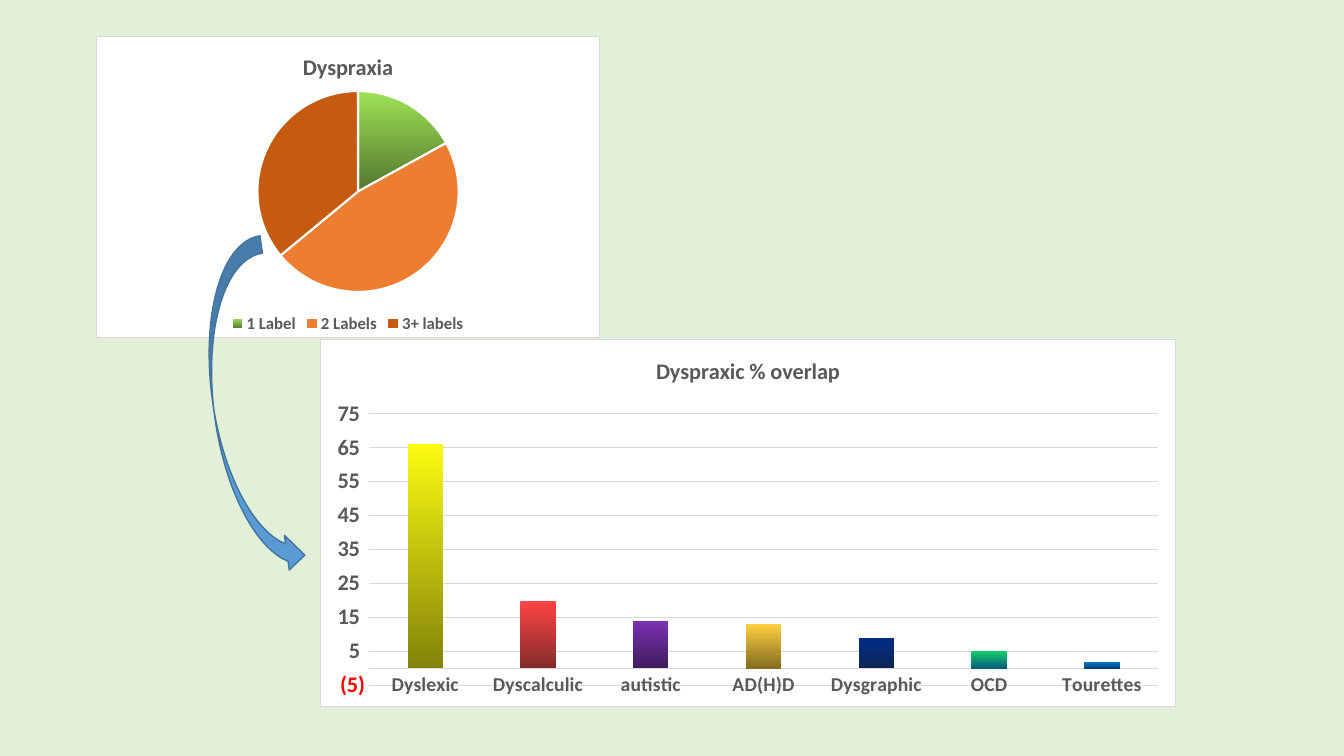
"""Build a slide showing how dyspraxia overlaps with other labels."""
from lxml import etree
from pptx import Presentation
from pptx import util as u
from pptx.chart.data import CategoryChartData
from pptx.dml.color import RGBColor
from pptx.enum import chart as ch, shapes
from pptx.oxml import parse_xml
from pptx.oxml.ns import nsdecls, qn

PX = 914400 / 100.8
GREY, RULE, WHITE = "595959", "D9D9D9", "FFFFFF"


def paint(fmt, *colours):
    """Fill with one colour, or with a top-to-bottom gradient of two."""
    if len(colours) == 1:
        fmt.solid()
        fmt.fore_color.rgb = RGBColor.from_string(colours[0])
        return
    fmt.gradient()
    fmt.gradient_angle = 270
    for stop, colour in zip(fmt.gradient_stops, colours):
        stop.color.rgb = RGBColor.from_string(colour)


def style_font(font, size, colour=GREY, bold=True):
    """Set the size, colour and weight of a Calibri font."""
    font.name, font.size, font.bold = "Calibri", u.Pt(size), bold
    paint(font.fill, colour)


prs = Presentation()
prs.slide_width, prs.slide_height = round(1344 * PX), round(756 * PX)
slide = prs.slides.add_slide(prs.slide_layouts[6])
paint(slide.background.fill, "E2F0D9")

pie_slices = [
    ("1 Label", 17, ("9EE256", "52762D")),
    ("2 Labels", 47, ("ED7D31",)),
    ("3+ labels", 36, ("C55A11",)),
]
overlaps = [
    ("Dyslexic", 66, ("FBFB11", "838309")),
    ("Dyscalculic", 20, ("FE4444", "832B2B")),
    ("autistic", 14, ("7B32B2", "401A5D")),
    ("AD(H)D", 13, ("FECF40", "846C21")),
    ("Dysgraphic", 9, ("012D86", "0E2557")),
    ("OCD", 5, ("14CD68", "035C7D")),
    ("Tourettes", 2, ("007BD3", "034373")),
]
panels = [
    ("Dyspraxia", ch.XL_CHART_TYPE.PIE, (96, 36, 504, 302), pie_slices),
    ("Dyspraxic % overlap", ch.XL_CHART_TYPE.COLUMN_CLUSTERED, (320, 339, 856, 368), overlaps),
]

charts = []
for title, kind, box, rows in panels:
    data = CategoryChartData()
    data.categories = [name for name, _, _ in rows]
    data.add_series(title, [value for _, value, _ in rows])
    chart = slide.shapes.add_chart(kind, *(round(n * PX) for n in box), data).chart
    charts.append(chart)
    style_font(chart.font, 10, "000000", False)

    chart.has_title = True
    tf = chart.chart_title.text_frame
    tf.text = title
    style_font(tf.paragraphs[0].runs[0].font, 16)
    chart.chart_title.include_in_layout = False

    is_pie = kind == ch.XL_CHART_TYPE.PIE
    chart.has_legend = is_pie
    plot = chart.plots[0]
    plot.vary_by_categories = is_pie
    series = plot.series[0]
    paint(series.format.fill, "5B9BD5")
    for i, (_, _, colours) in enumerate(rows):
        fmt = series.points[i].format
        paint(fmt.fill, *colours)
        if is_pie:
            paint(fmt.line.fill, WHITE)
            fmt.line.width = u.Pt(1.5)
        else:
            fmt.line.fill.background()

    space = chart.element
    body = space.find(qn("c:chart"))
    body.addnext(parse_xml(
        f'<c:spPr {nsdecls("c", "a")}><a:solidFill><a:srgbClr val="{WHITE}"/></a:solidFill>'
        f'<a:ln w="9525"><a:solidFill><a:srgbClr val="{RULE}"/></a:solidFill></a:ln></c:spPr>'))
    if space.find(qn("c:roundedCorners")) is None:
        body.addprevious(parse_xml(f'<c:roundedCorners {nsdecls("c")} val="0"/>'))

pie, bars = charts

pie.legend.position = ch.XL_LEGEND_POSITION.BOTTOM
pie.legend.include_in_layout = False
style_font(pie.legend.font, 12)
area = pie.element.find(".//" + qn("c:plotArea"))
for old in area.findall(qn("c:layout")):
    area.remove(old)
layout = etree.Element(qn("c:layout"))
manual = etree.SubElement(layout, qn("c:manualLayout"))
settings = [("layoutTarget", "inner"), ("xMode", "edge"), ("yMode", "edge"),
            ("x", "0.32"), ("y", "0.18"), ("w", "0.4"), ("h", "0.67")]
for tag, value in settings:
    etree.SubElement(manual, qn("c:" + tag)).set("val", value)
area.insert(0, layout)

bars.plots[0].gap_width, bars.plots[0].overlap = 219, -27
cat, val = bars.category_axis, bars.value_axis
for axis, size in ((cat, 14), (val, 16)):
    axis.major_tick_mark = axis.minor_tick_mark = ch.XL_TICK_MARK.NONE
    style_font(axis.tick_labels.font, size)
val.minimum_scale, val.maximum_scale, val.major_unit = -5, 75, 10
val.tick_labels.number_format = r"0_);[Red]\(0\)"
val.tick_labels.number_format_is_linked = False
val.format.line.fill.background()
for line in (cat.format.line, val.major_gridlines.format.line):
    paint(line.fill, RULE)
    line.width = u.Pt(0.75)

arrow = slide.shapes.add_shape(shapes.MSO_SHAPE.CURVED_RIGHT_ARROW,
                               *(round(n * PX) for n in (214, 239, 70, 340)))
arrow.rotation = 352
arrow.shadow.inherit = False
paint(arrow.fill, "5B9BD5")
paint(arrow.line.fill, "43739E")
arrow.line.width = u.Pt(1)
tree = slide.shapes[0].element
tree.addnext(arrow.element)

prs.save("out.pptx")
